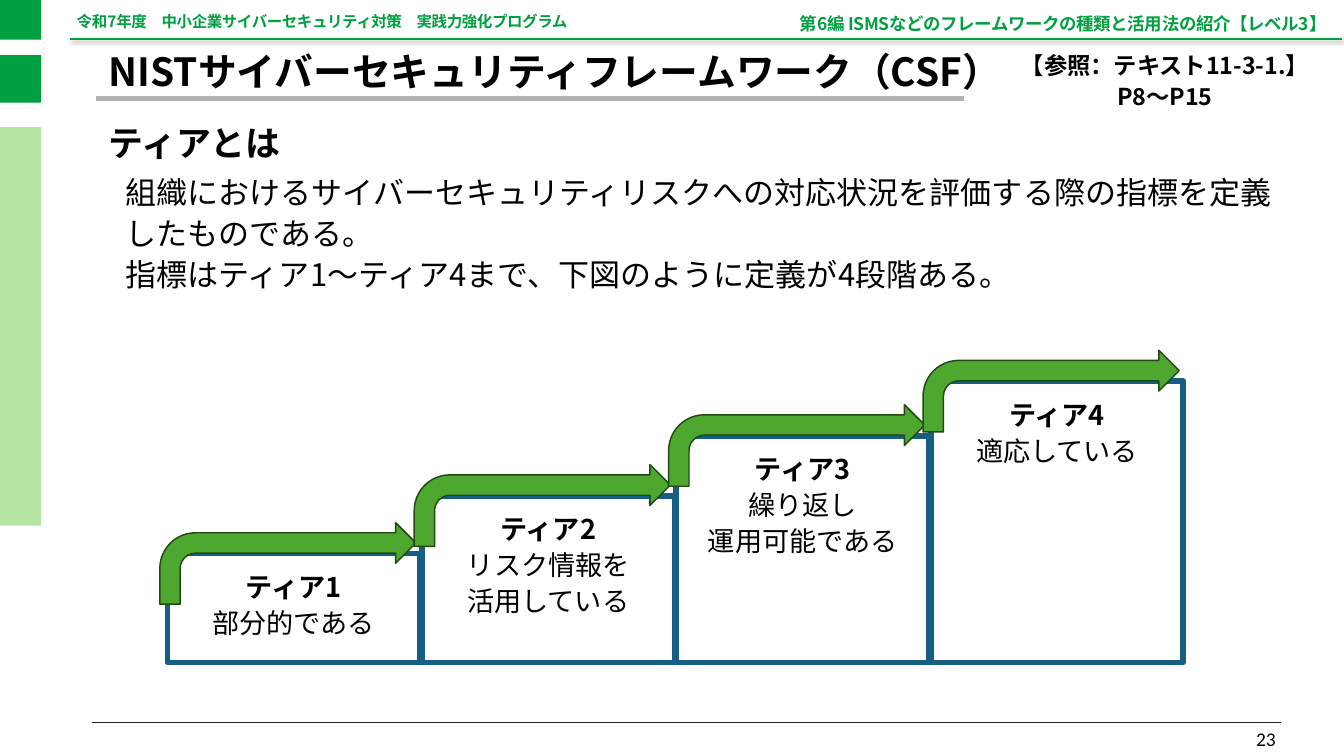
from lxml.etree import SubElement
from pptx import Presentation
from pptx.dml.color import RGBColor
from pptx.enum.shapes import MSO_CONNECTOR as Connector, MSO_SHAPE as Shape
from pptx.enum.text import MSO_ANCHOR as Anchor, MSO_AUTO_SIZE as AutoSize, PP_ALIGN as Align
from pptx.oxml.ns import qn
from pptx.util import Inches, Pt

GREEN, BLACK, WHITE = "009F40", "000000", "FFFFFF"
PALE, GREY, DARK = "B4E5A2", "B2B3B5", "222222"
BLUE, LEAF, MOSS = "156082", "4EA72E", "224914"
FONT = "Noto Sans CJK JP"
INSETS = (0.1, 0.05, 0.1, 0.05)
FLUSH = (0, 0.01, 0, 0)

STEPS = [
    (73.22, "ティア1\n部分的である"),
    (65.56, "ティア2\nリスク情報を\n活用している"),
    (57.62, "ティア3\n繰り返し\n運用可能である"),
    (50.42, "ティア4\n適応している"),
]
STEP_LEFT, STEP_PITCH, STEP_WIDTH, STEP_BOTTOM = 12.46, 18.93, 18.8, 87.63


def color(value):
    """Turn a hex string into a colour."""
    return RGBColor.from_string(value)


class SlideBuilder:
    """Draw styled elements placed by percentages of the slide's size."""

    def __init__(self, deck):
        """Open a page with a title and a body placeholder."""
        self.deck = deck
        self.page = deck.slides.add_slide(deck.slide_layouts[1])

    def across(self, share):
        """Convert a percentage of the slide's width."""
        return int(self.deck.slide_width * share / 100)

    def down(self, share):
        """Convert a percentage of the slide's height."""
        return int(self.deck.slide_height * share / 100)

    def area(self, left, top, width, height):
        """Convert a rectangle of percentages."""
        return self.across(left), self.down(top), self.across(width), self.down(height)

    def line(self, left, right, top, stroke, weight, shadow=False):
        """Draw a horizontal rule."""
        start, end, level = self.across(left), self.across(right), self.down(top)
        rule = self.page.shapes.add_connector(Connector.STRAIGHT, start, level, end, level)
        rule.line.color.rgb = color(stroke)
        rule.line.width = Pt(weight)
        effects = SubElement(rule._element.spPr, qn("a:effectLst"))
        if shadow:
            outer = SubElement(effects, qn("a:outerShdw"), blurRad=str(Pt(4)),
                               dist=str(Pt(3)), dir="2700000")
            tint = SubElement(outer, qn("a:srgbClr"), val=BLACK)
            SubElement(tint, qn("a:alpha"), val="40000")

    def shape(self, kind, place, fill, stroke=None, weight=0):
        """Draw a filled preset shape."""
        box = self.page.shapes.add_shape(kind, *self.area(*place))
        box.shadow.inherit = False
        box.fill.solid()
        box.fill.fore_color.rgb = color(fill)
        if stroke:
            box.line.color.rgb = color(stroke)
            box.line.width = Pt(weight)
        else:
            box.line.fill.background()
        return box

    def set_text(self, box, text, size, ink=BLACK, font=FONT, bold=False, heading=False,
                 align=Align.LEFT, anchor=Anchor.TOP, spacing=1.1, before=0,
                 insets=INSETS, tracking=0):
        """Fill a box with text and format its paragraphs."""
        frame = box.text_frame
        frame.text = text
        frame.word_wrap = True
        frame.auto_size = AutoSize.NONE
        frame.vertical_anchor = anchor
        (frame.margin_left, frame.margin_top,
         frame.margin_right, frame.margin_bottom) = map(Inches, insets)
        for number, para in enumerate(frame.paragraphs):
            para.alignment = align
            para.line_spacing = spacing
            para.space_before = Pt(before)
            for span in para.runs:
                span.font.name = font
                span.font.size = Pt(size)
                span.font.bold = bold or (heading and number == 0)
                span.font.color.rgb = color(ink)
                props = span._r.get_or_add_rPr()
                SubElement(props, qn("a:ea"), typeface=font)
                if tracking:
                    props.set("spc", str(tracking))

    def label(self, place, text, size, **style):
        """Add a text box."""
        self.set_text(self.page.shapes.add_textbox(*self.area(*place)), text, size, **style)

    def placeholder(self, index, place, text, size, **style):
        """Move and fill a template placeholder without bullets."""
        box = self.page.placeholders[index]
        box.left, box.top, box.width, box.height = self.area(*place)
        self.set_text(box, text, size, **style)
        for para in box.text_frame.paragraphs:
            props = para._p.get_or_add_pPr()
            props.set("marL", "0")
            props.set("indent", "0")
            SubElement(props, qn("a:buNone"))

    def step(self, left, top, text):
        """Draw one tier of the staircase with its arrow."""
        box = self.shape(Shape.RECTANGLE, (left, top, STEP_WIDTH, STEP_BOTTOM - top),
                         WHITE, BLUE, 6)
        self.set_text(box, text, 28, heading=True, align=Align.CENTER,
                      insets=(0.1, 0.2, 0.1, 0.05))
        self.shape(Shape.BENT_ARROW, (left - 0.57, top - 4.1, 19.06, 10.8), LEAF, MOSS, 1.5)


def main():
    """Build and save the deck."""
    deck = Presentation()
    deck.slide_width, deck.slide_height = Inches(19.26), Inches(10.83)
    slide = SlideBuilder(deck)

    slide.line(5.19, 99.84, 5.17, GREEN, 2, shadow=True)
    slide.line(6.85, 95.33, 95.57, DARK, 1)
    slide.line(7.17, 71.7, 13.02, GREY, 6)
    for top, height, fill in [(0, 5.26, GREEN), (7.29, 6.28, GREEN), (16.81, 52.72, PALE)]:
        slide.shape(Shape.RECTANGLE, (0, top, 3.06, height), fill)

    header = dict(ink=GREEN, bold=True, insets=FLUSH, tracking=-40)
    slide.label((5.71, 2.03, 90.76, 2.03), "令和7年度　中小企業サイバーセキュリティ対策　実践力強化プログラム",
                16, spacing=Pt(15), **header)
    slide.label((44.76, 1.85, 53.95, 2.68), "第6編 ISMSなどのフレームワークの種類と活用法の紹介【レベル3】",
                18, spacing=0.9, align=Align.RIGHT, anchor=Anchor.MIDDLE, **header)
    slide.label((72.95, 94.37, 22.48, 5.36), "23", 20, font="Calibri", spacing=1.0,
                align=Align.RIGHT, anchor=Anchor.BOTTOM)

    heading = dict(bold=True, spacing=0.9, before=10)
    slide.placeholder(0, (7.58, 7.02, 84.84, 5.63),
                      "NISTサイバーセキュリティフレームワーク（CSF）", 40,
                      anchor=Anchor.MIDDLE, **heading)
    slide.label((7.58, 16.25, 84.84, 6.46), "ティアとは", 36, **heading)
    slide.placeholder(1, (8.83, 21.98, 87.75, 16.53),
                      "組織におけるサイバーセキュリティリスクへの対応状況を評価する際の指標を定義したものである。\n"
                      "指標はティア1～ティア4まで、下図のように定義が4段階ある。", 32)
    slide.label((74.4, 6, 24.56, 8.59), "【参照：テキスト11-3-1.】\nP8～P15", 24,
                bold=True, align=Align.CENTER)

    for number, (top, text) in enumerate(STEPS):
        slide.step(STEP_LEFT + number * STEP_PITCH, top, text)

    deck.save("out.pptx")


if __name__ == "__main__":
    main()
